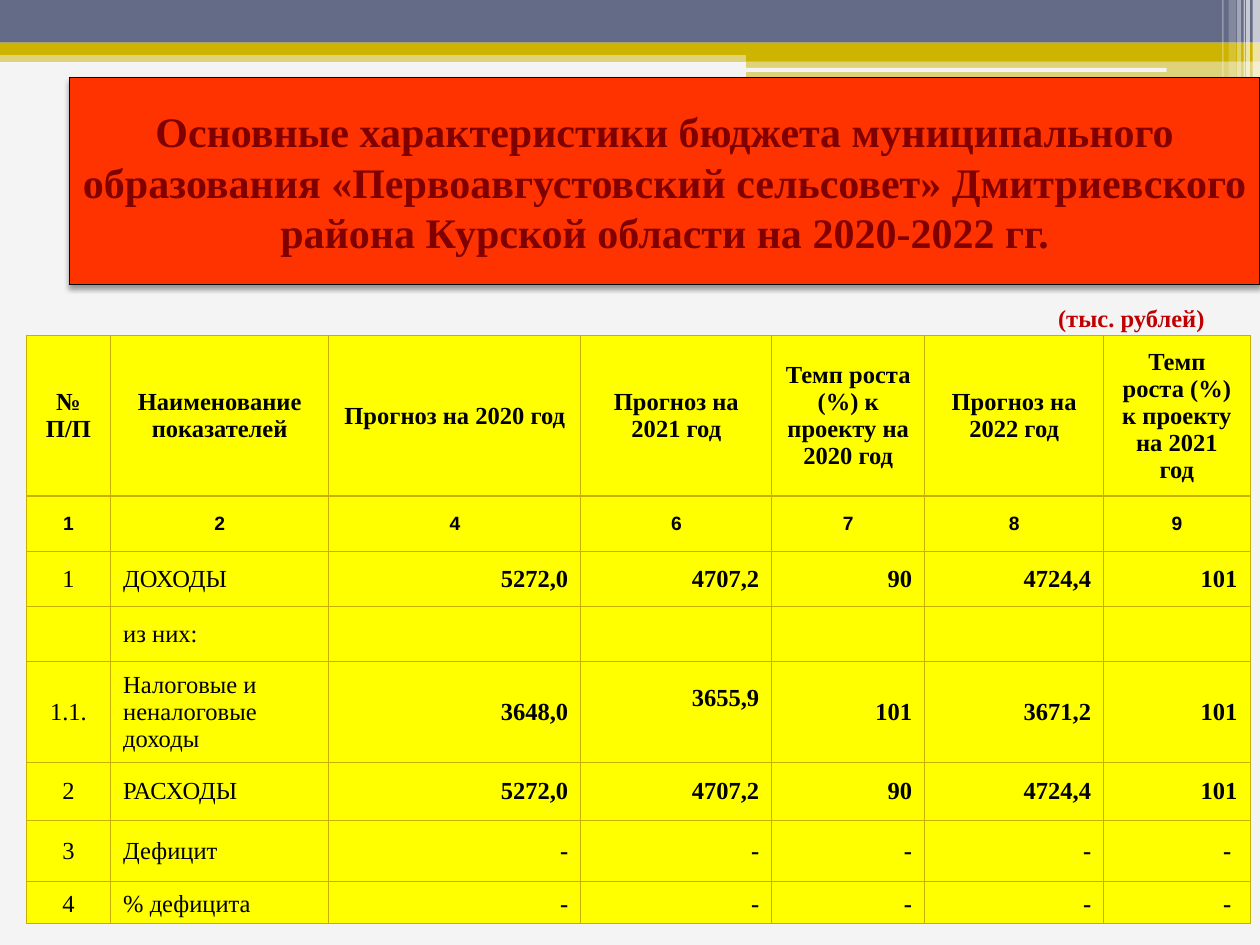
from dataclasses import dataclass
from typing import Any, NamedTuple

import pptx
import pptx.dml.color
import pptx.enum.shapes
import pptx.enum.text
import pptx.oxml
import pptx.oxml.ns
import pptx.util

Cm = pptx.util.Cm
Pt = pptx.util.Pt
Align = pptx.enum.text.PP_ALIGN
Anchor = pptx.enum.text.MSO_ANCHOR
Preset = pptx.enum.shapes.MSO_SHAPE


@dataclass(frozen=True)
class Theme:
    background: str = "F4F4F4"
    slate: str = "646B86"
    gold: str = "CCB400"
    white: str = "FFFFFF"
    black: str = "000000"
    title_fill: str = "FF3300"
    title_text: str = "800000"
    unit_text: str = "C00000"
    cell_fill: str = "FFFF00"
    cell_border: str = "C8B000"
    serif: str = "Times New Roman"
    sans: str = "Arial"
    title_size: float = 24
    body_size: float = 14
    number_size: float = 11
    line_width: float = 0.75


THEME = Theme()


class Box(NamedTuple):
    left: float
    top: float
    width: float
    height: float

    def lengths(self) -> list[pptx.util.Length]:
        return [Cm(value) for value in self]


class Band(NamedTuple):
    box: Box
    color: str
    opacity: int = 100
    preset: Any = Preset.RECTANGLE


class TextStyle(NamedTuple):
    size: float = THEME.body_size
    color: str = THEME.black
    bold: bool = True
    font: str = THEME.serif
    alignment: Any = Align.CENTER


BANDS = [
    Band(Box(0, 1.02, 25.4, 0.23), THEME.gold, 50),
    Band(Box(0, 0, 25.4, 0.86), THEME.slate),
    Band(Box(0, 0.86, 25.4, 0.25), THEME.gold),
    Band(Box(15.04, 0.99, 10.36, 0.25), THEME.gold),
    Band(Box(15.04, 1.24, 10.36, 0.49), THEME.gold, 50),
    Band(Box(15.01, 1.37, 8.51, 0.08), THEME.background, preset=Preset.ROUNDED_RECTANGLE),
    Band(Box(25.25, 0, 0.15, 1.73), THEME.white, 65),
    Band(Box(25.12, 0, 0.08, 1.73), THEME.white, 65),
    Band(Box(25.07, 0, 0.03, 1.73), THEME.white, 60),
    Band(Box(24.94, 0, 0.08, 1.73), THEME.white, 40),
    Band(Box(24.77, 0, 0.15, 1.63), THEME.white, 20),
    Band(Box(24.64, 0, 0.03, 1.63), THEME.white, 30),
]

TITLE = ("Основные характеристики бюджета муниципального образования "
         "«Первоавгустовский сельсовет» Дмитриевского района Курской области "
         "на 2020-2022 гг.")

COLUMN_WIDTHS = [1.7, 4.4, 5.08, 3.85, 3.08, 3.61, 2.95]
ROW_HEIGHTS = [3.23, 1.11, 1.12, 1.11, 2.03, 1.17, 1.23, 0.85]
ROWS = [
    ["№ П/П", "Наименование показателей", "Прогноз на 2020 год", "Прогноз на 2021 год",
     "Темп роста (%) к проекту на 2020 год", "Прогноз на 2022 год",
     "Темп роста (%) к проекту на 2021 год"],
    ["1", "2", "4", "6", "7", "8", "9"],
    ["1", "ДОХОДЫ", "5272,0", "4707,2", "90", "4724,4", "101"],
    ["", "из них:", "", "", "", "", ""],
    ["1.1.", "Налоговые и неналоговые доходы", "3648,0", "3655,9", "101", "3671,2", "101"],
    ["2", "РАСХОДЫ", "5272,0", "4707,2", "90", "4724,4", "101"],
    ["3", "Дефицит", "-", "-", "-", "-", "-"],
    ["4", "% дефицита", "-", "-", "-", "-", "-"],
]
HEADER_STYLE = TextStyle()
NUMBER_STYLE = TextStyle(size=THEME.number_size, font=THEME.sans)
LABEL_STYLES = [TextStyle(bold=False), TextStyle(bold=False, alignment=Align.LEFT)]
VALUE_STYLE = TextStyle(alignment=Align.RIGHT)


def rgb(color: str) -> pptx.dml.color.RGBColor:
    return pptx.dml.color.RGBColor.from_string(color)


def set_attributes(target: Any, values: dict[str, Any]) -> None:
    for name, value in values.items():
        setattr(target, name, value)


def drawing_element(xml: str) -> Any:
    """Parse DrawingML whose root tag still lacks its namespace."""
    return pptx.oxml.parse_xml(xml.replace(" ", f" {pptx.oxml.ns.nsdecls('a')} ", 1))


def write_text(text_frame: Any, text: str, style: TextStyle) -> None:
    paragraph = text_frame.paragraphs[0]
    paragraph.alignment = style.alignment
    run = paragraph.add_run()
    run.text = text
    set_attributes(run.font, {"size": Pt(style.size), "bold": style.bold, "name": style.font})
    run.font.color.rgb = rgb(style.color)


def add_band(slide: Any, band: Band) -> Any:
    shape = slide.shapes.add_shape(band.preset, *band.box.lengths())
    shape.shadow.inherit = False
    shape.fill.solid()
    shape.fill.fore_color.rgb = rgb(band.color)
    shape.line.fill.background()
    if band.opacity < 100:
        color = next(shape._element.spPr.iter(pptx.oxml.ns.qn("a:srgbClr")))
        color.append(drawing_element(f'<a:alpha val="{band.opacity * 1000}"/>'))
    return shape


def add_title(slide: Any) -> None:
    shape = add_band(slide, Band(Box(1.4, 1.57, 24, 4.17), THEME.title_fill))
    shape.line.color.rgb = rgb(THEME.black)
    shape.line.width = Pt(THEME.line_width)
    effects = shape._element.spPr.find(pptx.oxml.ns.qn("a:effectLst"))
    effects.append(drawing_element(
        f'<a:outerShdw blurRad="{Pt(3.1)}" dist="{Pt(1.6)}" dir="5400000">'
        f'<a:srgbClr val="{THEME.black}"><a:alpha val="38000"/></a:srgbClr></a:outerShdw>'))
    set_attributes(shape.text_frame, {"word_wrap": True, "vertical_anchor": Anchor.MIDDLE})
    write_text(shape.text_frame, TITLE, TextStyle(THEME.title_size, THEME.title_text))


def add_unit_label(slide: Any) -> None:
    shape = slide.shapes.add_textbox(*Box(21.08, 5.98, 3.61, 0.84).lengths())
    shape.text_frame.word_wrap = True
    write_text(shape.text_frame, "(тыс. рублей)",
               TextStyle(color=THEME.unit_text, alignment=Align.LEFT))


def add_borders(cell: Any) -> None:
    properties = cell._tc.get_or_add_tcPr()
    for index, side in enumerate(("lnL", "lnR", "lnT", "lnB")):
        properties.insert(index, drawing_element(
            f'<a:{side} w="{Pt(THEME.line_width)}"><a:solidFill>'
            f'<a:srgbClr val="{THEME.cell_border}"/></a:solidFill></a:{side}>'))


def cell_style(row: int, column: int) -> TextStyle:
    if row < 2:
        return (HEADER_STYLE, NUMBER_STYLE)[row]
    return LABEL_STYLES[column] if column < 2 else VALUE_STYLE


def add_budget_table(slide: Any) -> None:
    box = Box(0.53, 6.77, sum(COLUMN_WIDTHS), sum(ROW_HEIGHTS))
    table = slide.shapes.add_table(len(ROWS), len(COLUMN_WIDTHS), *box.lengths()).table
    for column, width in zip(table.columns, COLUMN_WIDTHS):
        column.width = Cm(width)
    for row, height in zip(table.rows, ROW_HEIGHTS):
        row.height = Cm(height)
    for row_index, texts in enumerate(ROWS):
        for column_index, text in enumerate(texts):
            cell = table.cell(row_index, column_index)
            last_row = row_index == len(ROWS) - 1
            cell.vertical_anchor = Anchor.BOTTOM if last_row else Anchor.MIDDLE
            cell.fill.solid()
            cell.fill.fore_color.rgb = rgb(THEME.cell_fill)
            add_borders(cell)
            if text:
                write_text(cell.text_frame, text, cell_style(row_index, column_index))
            if text == "-" and column_index == len(texts) - 1:
                cell.margin_right = Cm(0.38)
    table.cell(4, 3).margin_bottom = Cm(0.68)


def main() -> None:
    presentation = pptx.Presentation()
    set_attributes(presentation, {"slide_width": Cm(25.4), "slide_height": Cm(19.05)})
    slide = presentation.slides.add_slide(presentation.slide_layouts[6])
    slide.background.fill.solid()
    slide.background.fill.fore_color.rgb = rgb(THEME.background)
    for band in BANDS:
        add_band(slide, band)
    add_title(slide)
    add_unit_label(slide)
    add_budget_table(slide)
    presentation.save("out.pptx")


if __name__ == "__main__":
    main()
